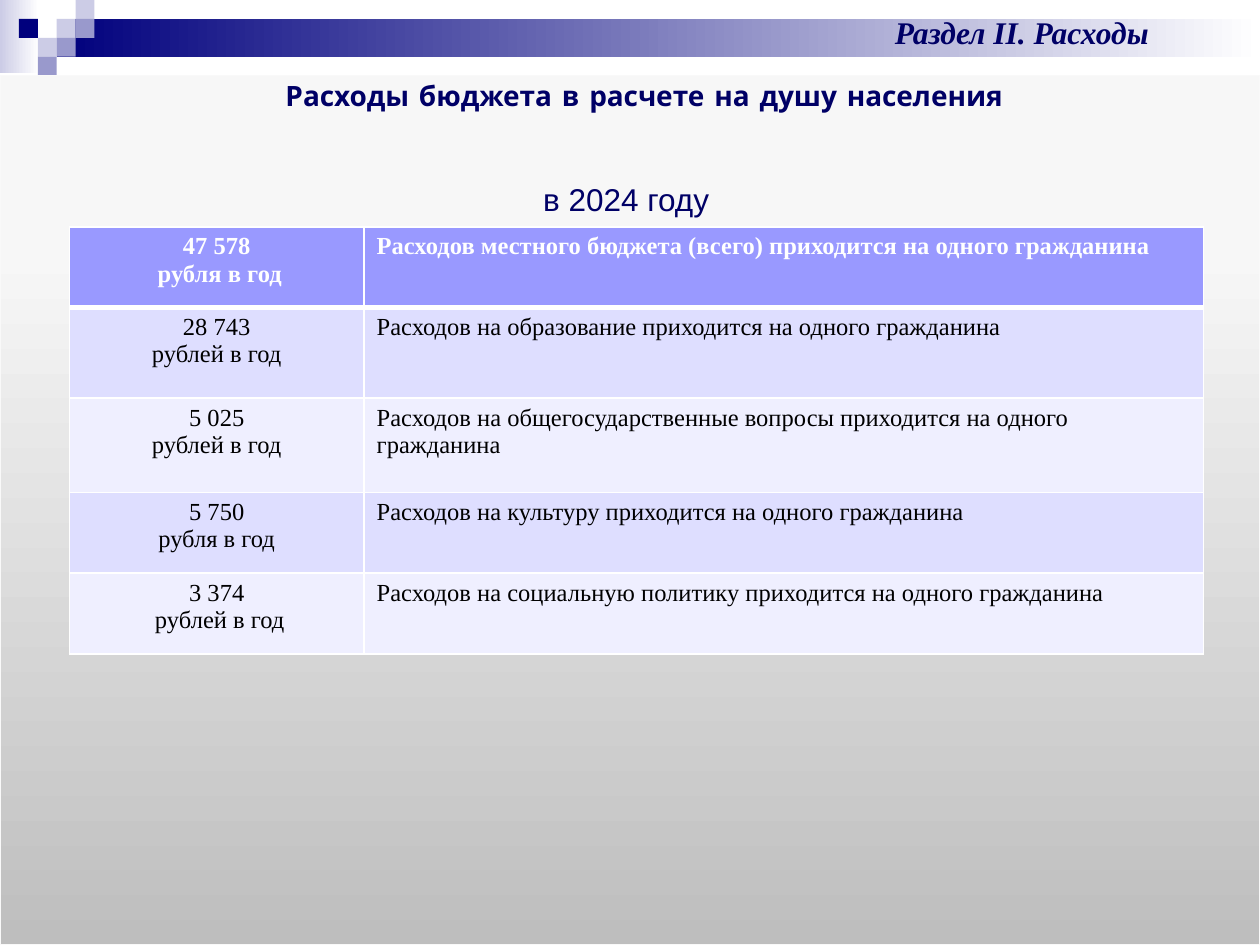
from dataclasses import dataclass
from copy import deepcopy
from lxml import etree
from pptx import Presentation
from pptx.dml.color import RGBColor as RGB
from pptx.enum.shapes import MSO_SHAPE as Shape
from pptx.enum.text import MSO_ANCHOR as Anchor, PP_ALIGN as Align
from pptx.oxml.ns import qn
from pptx.util import Inches, Pt


@dataclass(frozen=True)
class Theme:
    navy: str = "00007D"
    ink: str = "000066"
    pale: str = "CCCCE6"
    mid: str = "9999CC"
    white: str = "FFFFFF"
    black: str = "000000"
    edge: str = "F9F9F9"
    head: str = "9999FF"
    bands: tuple = ("DEDEFF", "EFEFFF")
    panel: tuple = ((0, "BEBEBE"), (80, "F7F7F7"), (100, "F8F8F8"))
    serif: str = "Times New Roman"
    big: int = 18
    sub: int = 16
    cell: int = 14


theme = Theme()
deck = Presentation()
deck.slide_width, deck.slide_height = Inches(10), Inches(7.5)
slide = deck.slides.add_slide(deck.slide_layouts[6])


def block(kind, x, y, w, h, paint, angle=0):
    """Add a borderless shape; paint is a colour or a list of gradient stops."""
    shape = slide.shapes.add_shape(kind, Inches(x), Inches(y), Inches(w), Inches(h))
    shape.shadow.inherit = False
    shape.line.fill.background()
    if isinstance(paint, str):
        shape.fill.solid()
        shape.fill.fore_color.rgb = RGB.from_string(paint)
        return shape
    shape.fill.gradient()
    shape.fill.gradient_angle = angle
    stops = next(shape.element.iter(qn("a:gsLst")))
    while len(stops) < len(paint):
        stops.append(deepcopy(stops[0]))
    for stop, (pos, color) in zip(shape.fill.gradient_stops, paint):
        stop.position = pos / 100
        stop.color.rgb = RGB.from_string(color)
    return shape


def style(para, font, size, color, bold=False, italic=False):
    para.font.name, para.font.size = font, Pt(size)
    para.font.bold, para.font.italic = bold, italic
    para.font.color.rgb = RGB.from_string(color)


# Top band
for x, y, w, h, start in ((0, 0, 0.31, 0.58, theme.pale),
                          (0.45, 0.15, 9.55, 0.3, theme.navy)):
    block(Shape.RECTANGLE, x, y, w, h, ((0, start), (100, theme.white)))

# Mosaic squares
side = 0.15
for col, row, color in ((3, 1, theme.pale), (4, 0, theme.pale), (4, 1, theme.mid),
                        (2, 2, theme.pale), (1, 1, theme.navy), (3, 2, theme.mid),
                        (2, 3, theme.mid)):
    block(Shape.RECTANGLE, col * side, row * side, side, side, color)

# Grey panel
panel = block(Shape.FLOWCHART_PROCESS, 0, 0.6, 10, 6.9, theme.panel, 90)
panel.line.color.rgb = RGB.from_string(theme.edge)
panel.line.width = Pt(0.75)

# Headings
for text, x, y, w, h, font, size, bold, italic in (
        ("в 2024 году", -0.03, 1.31, 10, 0.54, "Arial", theme.big, False, False),
        ("Раздел II. Расходы", 6.26, 0.05, 3.7, 0.4, theme.serif, theme.big, True, True),
        ("Расходы бюджета в расчете на душу населения",
         0.87, 0.57, 8.49, 0.37, "Comic Neue", theme.sub, True, False)):
    frame = slide.shapes.add_textbox(Inches(x), Inches(y), Inches(w), Inches(h)).text_frame
    frame.word_wrap = True
    frame.vertical_anchor = Anchor.MIDDLE
    para = frame.paragraphs[0]
    para.text = text
    para.alignment = Align.CENTER
    style(para, font, size, theme.ink, bold, italic)

# Spending table
rows = (
    ("47 578\n рубля в год", "Расходов местного бюджета (всего) приходится на одного гражданина"),
    ("28 743\nрублей в год", "Расходов на образование приходится на одного гражданина"),
    ("5 025\nрублей в год", "Расходов на общегосударственные вопросы приходится на одного гражданина"),
    ("5 750\nрубля в год", "Расходов на культуру приходится на одного гражданина"),
    ("3 374\n рублей в год", "Расходов на социальную политику приходится на одного гражданина"),
)
widths = (2.34, 6.66)
heights = (0.64, 0.72, 0.75, 0.64, 0.64)
table = slide.shapes.add_table(len(rows), len(widths), Inches(0.55), Inches(1.8),
                               Inches(sum(widths)), Inches(sum(heights))).table
for col, width in zip(table.columns, widths):
    col.width = Inches(width)
for row, height in zip(table.rows, heights):
    row.height = Inches(height)

for r, texts in enumerate(rows):
    top = r == 0
    for c, text in enumerate(texts):
        cell = table.cell(r, c)
        cell.text = text
        for para in cell.text_frame.paragraphs:
            para.alignment = Align.LEFT if c else Align.CENTER
            style(para, theme.serif, theme.cell, theme.white if top else theme.black, top)
        # Borders come before the fill in the cell properties
        props = cell._tc.get_or_add_tcPr()
        for tag in ("lnL", "lnR", "lnT", "lnB"):
            thick = (top and tag == "lnB") or (r == 1 and tag == "lnT")
            line = etree.SubElement(props, qn("a:" + tag), w=str(Pt(3 if thick else 1)))
            solid = etree.SubElement(line, qn("a:solidFill"))
            etree.SubElement(solid, qn("a:srgbClr"), val=theme.white)
        cell.fill.solid()
        cell.fill.fore_color.rgb = RGB.from_string(
            theme.head if top else theme.bands[(r - 1) % 2])

deck.save("out.pptx")
